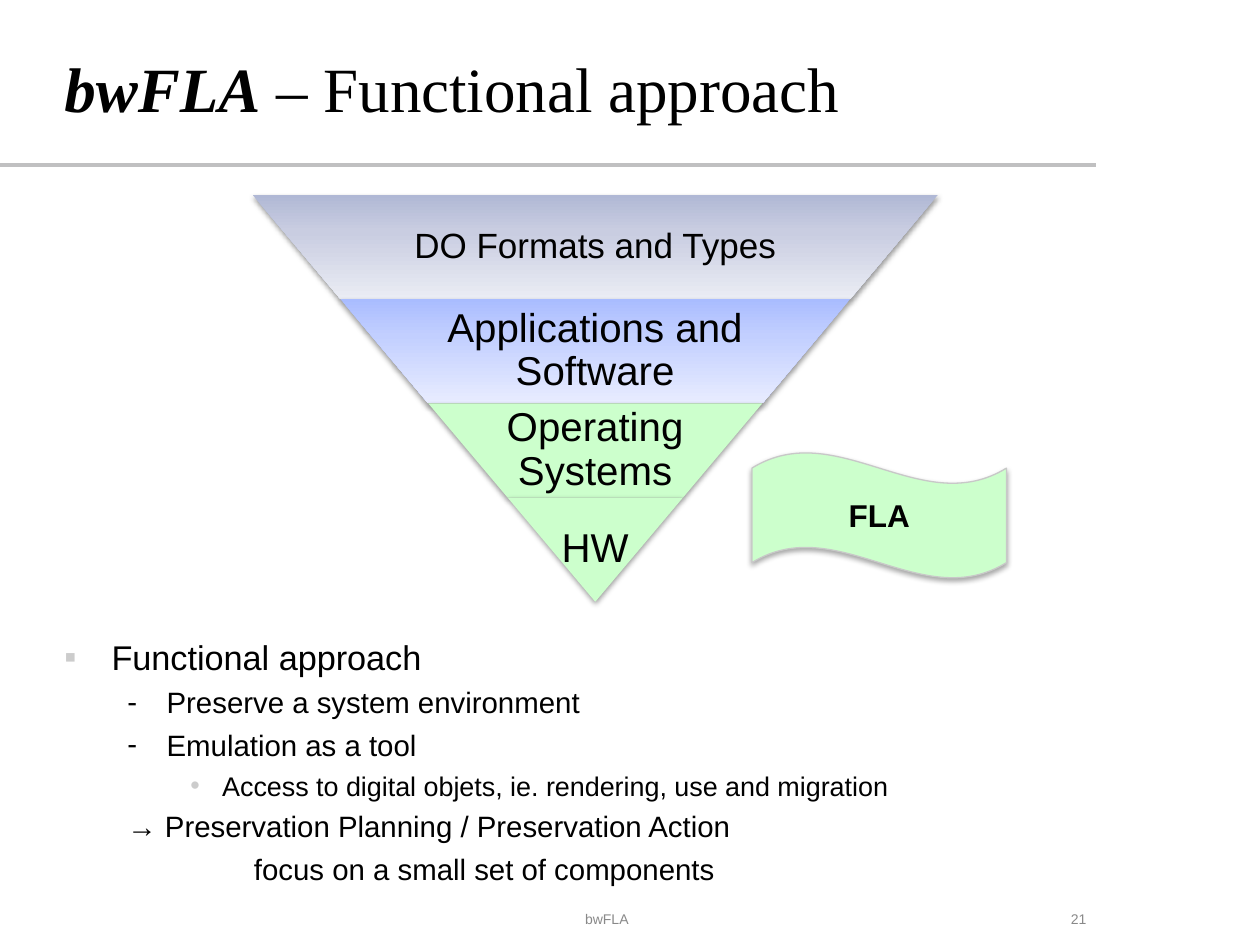
from dataclasses import dataclass
from typing import Optional

from lxml.etree import SubElement
from pptx import Presentation
from pptx.dml.color import RGBColor
from pptx.enum.shapes import MSO_CONNECTOR as Connector, MSO_SHAPE as Shape
from pptx.enum.text import MSO_ANCHOR as Anchor, PP_ALIGN as Align
from pptx.oxml.ns import qn
from pptx.util import Cm, Pt

COLORS = {
    "text": "000000",
    "footer": "898989",
    "rule": "C0C0C1",
    "bullet": "CCCCCC",
    "green": "CCFFCC",
    "wave_line": "C8C8C8",
}
GRAY_GRADIENT = ("B0B8D5", "C9CDE1", "EAECF4")
BLUE_GRADIENT = ("A9BCFF", "C2CFFF", "E8ECFF")
GRADIENT_STOPS = (0, 35, 100)

FUNNEL_CENTER = 12.0
FUNNEL_TOP = 3.93
SLOPE = 0.842
LABEL_SHARE = 0.65


@dataclass
class Tier:
    label: str
    height: float
    size: float
    gradient: Optional[tuple] = None
    label_share: float = LABEL_SHARE


@dataclass
class Point:
    text: str
    size: float
    margin: float
    level: int = 1
    hang: float = 0
    bullet: str = ""
    bullet_color: str = "text"


TIERS = [
    Tier("DO Formats and Types", 2.1, 20, GRAY_GRADIENT),
    Tier("Applications and Software", 2.1, 23, BLUE_GRADIENT),
    Tier("Operating Systems", 1.9, 23),
    Tier("HW", 2.1, 23, label_share=1),
]

POINTS = [
    Point("Functional approach", 19.6, 0.95, 0, 0.95, "▪", "bullet"),
    Point("Preserve a system environment", 16.8, 2.06, 1, 0.79, "-"),
    Point("Emulation as a tool", 16.8, 2.06, 1, 0.79, "-"),
    Point("Access to digital objets, ie. rendering, use and migration",
          15.4, 3.18, 2, 0.64, "•", "bullet"),
    Point("→ Preservation Planning / Preservation Action", 16.8, 1.27),
    Point("focus on a small set of components", 16.8, 3.82),
]


def rgb(name: str) -> RGBColor:
    return RGBColor.from_string(COLORS[name])


def style_run(run, size: float, color: str = "text", face: str = "Arial",
              bold: bool = False, italic: bool = False) -> None:
    run.font.name = face
    run.font.size = Pt(size)
    run.font.color.rgb = rgb(color)
    run.font.bold = bold
    run.font.italic = italic


def add_frame(slide, left: float, top: float, width: float, height: float,
              anchor=Anchor.TOP, inset: float = 0):
    box = slide.shapes.add_textbox(Cm(left), Cm(top), Cm(width), Cm(height))
    frame = box.text_frame
    frame.word_wrap = True
    frame.vertical_anchor = anchor
    frame.margin_left = frame.margin_right = Cm(inset)
    frame.margin_top = frame.margin_bottom = Cm(inset)
    return frame


def write_line(frame, text: str, size: float, color: str = "text",
               align=Align.CENTER, bold: bool = False):
    frame.text = text
    paragraph = frame.paragraphs[0]
    paragraph.alignment = align
    style_run(paragraph.runs[0], size, color, bold=bold)
    return paragraph


def add_shadow(shape, opacity: int, distance: int) -> None:
    shape.shadow.inherit = False
    effects = shape._element.spPr.find(qn("a:effectLst"))
    shadow = SubElement(effects, qn("a:outerShdw"), blurRad="40000",
                        dist=str(distance), dir="5400000", rotWithShape="0")
    black = SubElement(shadow, qn("a:srgbClr"), val=COLORS["text"])
    SubElement(black, qn("a:alpha"), val=str(opacity * 1000))


def fill_gradient(shape, colors: tuple) -> None:
    shape.fill.gradient()
    shape.fill.gradient_angle = 90
    stops = shape._element.spPr.find(qn("a:gradFill")).find(qn("a:gsLst"))
    for stop in list(stops):
        stops.remove(stop)
    for position, color in zip(GRADIENT_STOPS, colors):
        stop = SubElement(stops, qn("a:gs"), pos=str(position * 1000))
        SubElement(stop, qn("a:srgbClr"), val=color)


def add_tier(slide, tier: Tier, top: float, width: float) -> None:
    band = slide.shapes.add_shape(
        Shape.TRAPEZOID, Cm(FUNNEL_CENTER - width / 2), Cm(top), Cm(width), Cm(tier.height))
    band.rotation = 180
    band.adjustments[0] = SLOPE
    if tier.gradient:
        fill_gradient(band, tier.gradient)
    else:
        band.fill.solid()
        band.fill.fore_color.rgb = rgb("green")
    band.line.fill.background()
    add_shadow(band, 38, 20000)

    label_width = width * tier.label_share
    frame = add_frame(slide, FUNNEL_CENTER - label_width / 2, top, label_width,
                      tier.height, Anchor.MIDDLE, 0.08)
    write_line(frame, tier.label, tier.size).line_spacing = 0.9


def add_funnel(slide) -> None:
    top = FUNNEL_TOP
    remaining = sum(tier.height for tier in TIERS)
    for tier in TIERS:
        add_tier(slide, tier, top, 2 * SLOPE * remaining)
        top += tier.height
        remaining -= tier.height


def add_wave(slide) -> None:
    wave = slide.shapes.add_shape(Shape.WAVE, Cm(15.16), Cm(9.12), Cm(5.13), Cm(2.54))
    wave.fill.solid()
    wave.fill.fore_color.rgb = rgb("green")
    wave.line.color.rgb = rgb("wave_line")
    wave.line.width = Pt(0.75)
    add_shadow(wave, 35, 23000)
    wave.text_frame.vertical_anchor = Anchor.MIDDLE
    write_line(wave.text_frame, "FLA", 18, bold=True)


def add_points(slide) -> None:
    frame = add_frame(slide, 1.3, 12.83, 20.8, 4.47)
    for index, point in enumerate(POINTS):
        paragraph = frame.add_paragraph() if index else frame.paragraphs[0]
        paragraph.text = point.text
        paragraph.level = point.level
        if index:
            paragraph.space_before = Pt(4)
        properties = paragraph._p.get_or_add_pPr()
        properties.set("marL", str(Cm(point.margin)))
        properties.set("indent", str(-Cm(point.hang)))
        if point.bullet:
            color = SubElement(properties, qn("a:buClr"))
            SubElement(color, qn("a:srgbClr"), val=COLORS[point.bullet_color])
            SubElement(properties, qn("a:buFont"), typeface="Arial")
            SubElement(properties, qn("a:buChar"), char=point.bullet)
        style_run(paragraph.runs[0], point.size)


def add_title(slide) -> None:
    title = add_frame(slide, 1.3, 1, 20.8, 2).paragraphs[0]
    for text, emphasis in (("bwFLA", True), (" – Functional approach", False)):
        run = title.add_run()
        run.text = text
        style_run(run, 36, face="Times New Roman", bold=emphasis, italic=emphasis)
    rule = slide.shapes.add_connector(Connector.STRAIGHT, 0, Cm(3.33), Cm(22.1), Cm(3.33))
    rule.line.color.rgb = rgb("rule")
    rule.line.width = Pt(2.25)
    SubElement(rule._element.spPr, qn("a:effectLst"))


def add_footer(slide) -> None:
    project = add_frame(slide, 4.17, 18.19, 16.13, 0.66, Anchor.MIDDLE)
    write_line(project, "bwFLA", 8, "footer")
    number = add_frame(slide, 20.73, 18.19, 1.17, 0.66, Anchor.MIDDLE)
    write_line(number, "21", 8, "footer", Align.RIGHT)


def main() -> None:
    deck = Presentation()
    deck.slide_width, deck.slide_height = Cm(25.4), Cm(19.05)
    slide = deck.slides.add_slide(deck.slide_layouts[6])
    add_title(slide)
    add_footer(slide)
    add_points(slide)
    add_funnel(slide)
    add_wave(slide)
    deck.save("out.pptx")


if __name__ == "__main__":
    main()
